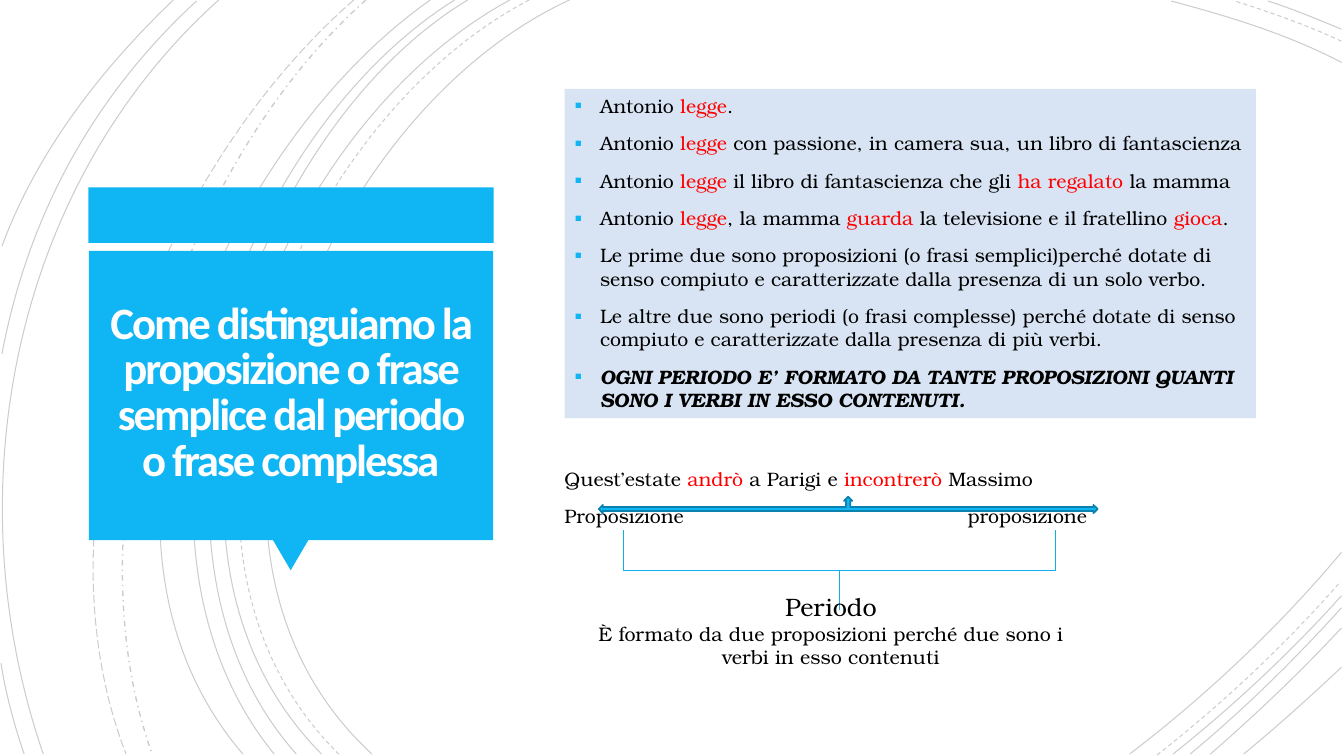
"""Build a slide on telling simple clauses from complex sentences."""
from lxml import etree
from pptx import Presentation, util as u
from pptx.dml.color import RGBColor
from pptx.enum import dml, shapes, text
from pptx.oxml.ns import qn

BLUE, RED, BLACK = "10B6F4", "FF0000", "000000"
SERIF = "TeX Gyre Bonum"
KIND = shapes.MSO_SHAPE
DASH = dml.MSO_LINE
UNIT = u.Cm(2.54)

ARCS = {
    (DASH.SOLID, 0.75): [
        (5.65, 0, 3.15, 1.15, 1.43, 5.4, 3.69, 7.48),
        (13.31, 0.62, 12.78, 0.34, 12.18, 0.16, 11.62, 0.01),
        (11.21, 7.48, 11.97, 6.9, 12.69, 6.22, 13.31, 5.48),
        (5.06, 0, 2.7, 1.27, 1.1, 5.37, 3.19, 7.48),
        (13.31, 0.29, 13.07, 0.19, 12.83, 0.09, 12.58, 0.01),
        (11.64, 7.48, 12.23, 7.01, 12.8, 6.48, 13.31, 5.91),
        (4.64, 0, 2.44, 1.33, 1.1, 5.41, 2.94, 7.48),
        (11.81, 7.48, 12.34, 7.04, 12.84, 6.55, 13.31, 6.03),
        (4.51, 0, 2.31, 1.38, 0.97, 5.33, 2.72, 7.48),
        (12.01, 7.48, 12.46, 7.09, 12.9, 6.67, 13.31, 6.23),
        (4.27, 0, 2.17, 1.47, 0.53, 5.29, 2.41, 7.48),
        (12.34, 7.48, 12.67, 7.21, 12.99, 6.92, 13.31, 6.62),
        (2.17, 0, 0.11, 1.85, -0.46, 4.9, 0.43, 7.48),
        (1.95, 0.01, 0.92, 0.96, 0.28, 2.14, 0.02, 3.51),
        (0.01, 6.58, 0.06, 6.89, 0.14, 7.19, 0.24, 7.48),
        (1.72, 0, 1, 0.69, 0.37, 1.5, 0.02, 2.44),
    ],
    (DASH.DASH, 0.75): [
        (5.25, 0, 2.85, 1.25, 1.23, 5.37, 3.36, 7.48),
        (13.31, 0.41, 12.97, 0.25, 12.6, 0.12, 12.25, 0.01),
        (11.48, 7.49, 12.13, 6.98, 12.75, 6.4, 13.3, 5.77),
    ],
    (DASH.DASH_DOT, 1): [(3.63, 0, 1.76, 1.66, 0.65, 5.09, 1.51, 7.48)],
    (DASH.LONG_DASH, 0.75): [(3.51, 0, 1.57, 1.69, 0.29, 4.99, 1.25, 7.48)],
}

TITLE = ("Come distinguiamo la proposizione o frase semplice "
         "dal periodo o frase complessa")
POINTS = [
    "Antonio *legge*.",
    "Antonio *legge *con passione, in camera sua, un libro di fantascienza",
    "Antonio *legge *il libro di fantascienza che gli *ha regalato *la mamma",
    "Antonio *legge*, la mamma *guarda* la televisione e il fratellino *gioca*.",
    "Le prime due sono proposizioni (o frasi semplici)perché dotate di senso "
    "compiuto e caratterizzate dalla presenza di un solo verbo.",
    "Le altre due sono periodi (o frasi complesse) perché dotate di senso "
    "compiuto e caratterizzate dalla presenza di più verbi.",
]
RULE = ("OGNI PERIODO E’ FORMATO DA TANTE PROPOSIZIONI QUANTI SONO "
        "I VERBI IN ESSO CONTENUTI.")
SAMPLE = [
    "Quest’estate *andrò* a Parigi e *incontrerò* Massimo",
    "Proposizione\t\t\tproposizione",
]
NOTE = "È formato da due proposizioni perché due sono i verbi in esso contenuti"


def put(item, **vals):
    """Set each given attribute on an object."""
    for key, val in vals.items():
        setattr(item, key, val)


def paint(fmt, hue):
    """Give a fill or font a solid colour."""
    if hasattr(fmt, "solid"):
        fmt.solid()
        fmt = fmt.fore_color
    else:
        fmt = fmt.color
    fmt.rgb = RGBColor.from_string(hue)


def tag(node, name, **vals):
    """Append a drawing element and return it."""
    return etree.SubElement(node, qn(name), vals)


def place(item, x, y, w, h):
    """Set a position and size in centimetres."""
    put(item, left=u.Cm(x), top=u.Cm(y), width=u.Cm(w), height=u.Cm(h))


def arc(slide, ends, dash, wide):
    """Draw one faint cubic curve."""
    spots = [round(v * UNIT) for v in ends]
    dots = list(zip(spots[::2], spots[1::2]))
    pen = slide.shapes.build_freeform(*dots[0])
    pen.add_line_segments(dots[1:], close=False)
    line = pen.convert_to_shape()
    legs = list(line._element.iter(qn("a:lnTo")))
    curve = tag(legs[0].getparent(), "a:cubicBezTo")
    for leg in legs:
        curve.append(leg[0])
        leg.getparent().remove(leg)
    line.shadow.inherit = False
    line.fill.background()
    paint(line.line.fill, BLACK)
    put(line.line, width=u.Pt(wide), dash_style=dash)
    for hue in line.line._ln.iter(qn("a:srgbClr")):
        tag(hue, "a:alpha", val="20000")


def shape(slide, kind, box, fill=None, line=None, wide=0.75, turn=0):
    """Add a preset shape with the given fill and outline."""
    item = slide.shapes.add_shape(kind, *map(u.Cm, box))
    item.shadow.inherit = False
    item.rotation = turn
    if fill:
        paint(item.fill, fill)
    else:
        item.fill.background()
    if line:
        paint(item.line.fill, line)
        item.line.width = u.Pt(wide)
    else:
        item.line.fill.background()
    return item


def write(para, words, size, hue=BLACK, face=SERIF, **vals):
    """Write a paragraph, colouring the parts between asterisks red."""
    for i, part in enumerate(words.split("*")):
        run = para.add_run()
        run.text = part
        put(run.font, size=u.Pt(size), name=face, **vals)
        paint(run.font, RED if i % 2 else hue)


def lines(frame, count):
    """Return the frame's paragraphs, adding up to the count."""
    while len(frame.paragraphs) < count:
        frame.add_paragraph()
    return frame.paragraphs


def space(para, mark):
    """Set list spacing, tab width and the square bullet, or none."""
    put(para, space_before=u.Pt(10), space_after=u.Pt(0), line_spacing=1.0,
        alignment=text.PP_ALIGN.LEFT)
    props = para._p.get_or_add_pPr()
    gap = u.Cm(0.64) if mark else 0
    for key, val in dict(marL=gap, indent=-gap, defTabSz=UNIT).items():
        props.set(key, str(int(val)))
    if mark:
        tag(tag(props, "a:buClr"), "a:srgbClr", val=BLUE)
        tag(props, "a:buSzPct", val="110000")
        tag(props, "a:buFont", typeface="Arial")
        tag(props, "a:buChar", char="▪")
    else:
        tag(props, "a:buNone")


def head(item):
    """Format and fill the title."""
    place(item, 2.46, 6.5, 9.73, 6.86)
    edge = u.Cm(0.25)
    put(item.text_frame, word_wrap=True, auto_size=text.MSO_AUTO_SIZE.NONE,
        vertical_anchor=text.MSO_ANCHOR.MIDDLE, margin_left=edge,
        margin_right=edge, margin_top=edge, margin_bottom=edge)
    para = item.text_frame.paragraphs[0]
    put(para, alignment=text.PP_ALIGN.CENTER, line_spacing=0.85)
    write(para, TITLE, 32, "FFFEFF", "Calibri", bold=True)
    para.runs[0].font._element.set("spc", "-150")


def body(item, box, rows, mark, rule=None):
    """Fill a body placeholder with a list and an optional closing rule."""
    place(item, *box)
    frame = item.text_frame
    put(frame, word_wrap=True, auto_size=text.MSO_AUTO_SIZE.NONE,
        vertical_anchor=text.MSO_ANCHOR.TOP)
    paras = lines(frame, len(rows) + bool(rule))
    for para in paras:
        space(para, mark)
    for para, row in zip(paras, rows):
        write(para, row, 13.9)
    if rule:
        write(paras[-1], rule, 13.9, bold=True, italic=True)


def label(slide, box, rows):
    """Add a centred text box of sized lines."""
    item = slide.shapes.add_textbox(*map(u.Cm, box))
    item.text_frame.word_wrap = True
    for para, (words, size) in zip(lines(item.text_frame, len(rows)), rows):
        para.alignment = text.PP_ALIGN.CENTER
        write(para, words, size)


def main():
    """Build and save the slide."""
    deck = Presentation()
    put(deck, slide_width=u.Cm(33.87), slide_height=u.Cm(19.05))
    slide = deck.slides.add_slide(deck.slide_layouts[3])
    title, facts, demo = slide.placeholders
    for (dash, wide), group in ARCS.items():
        for ends in group:
            arc(slide, ends, dash, wide)
    shape(slide, KIND.RECTANGLE, (2.23, 4.72, 10.21, 1.4), BLUE)
    shape(slide, KIND.ISOSCELES_TRIANGLE, (6.88, 13.61, 0.89, 0.76), BLUE, turn=180)
    shape(slide, KIND.RECTANGLE, (2.24, 6.32, 10.19, 7.29), BLUE)
    for item in (title, facts, demo):
        slide.shapes._spTree.append(item._element)
    head(title)
    body(facts, (14.23, 2.24, 17.42, 8.3), POINTS, True, RULE)
    paint(facts.fill, "D8E4F3")
    body(demo, (13.97, 11.63, 17.42, 5.18), SAMPLE, False)
    shape(slide, KIND.LEFT_RIGHT_UP_ARROW, (15.09, 12.52, 12.57, 0.41),
          BLUE, "0B81AD", 1.25)
    brace = shape(slide, KIND.RIGHT_BRACE, (20.15, 8.93, 2.01, 10.87),
                  line="0FAEE9", turn=90)
    brace.adjustments[0] = 0
    brace.adjustments[1] = 0.5
    label(slide, (14.22, 14.78, 13.44, 2.24), [("Periodo", 18), (NOTE, 14)])
    deck.save("out.pptx")


if __name__ == "__main__":
    main()
